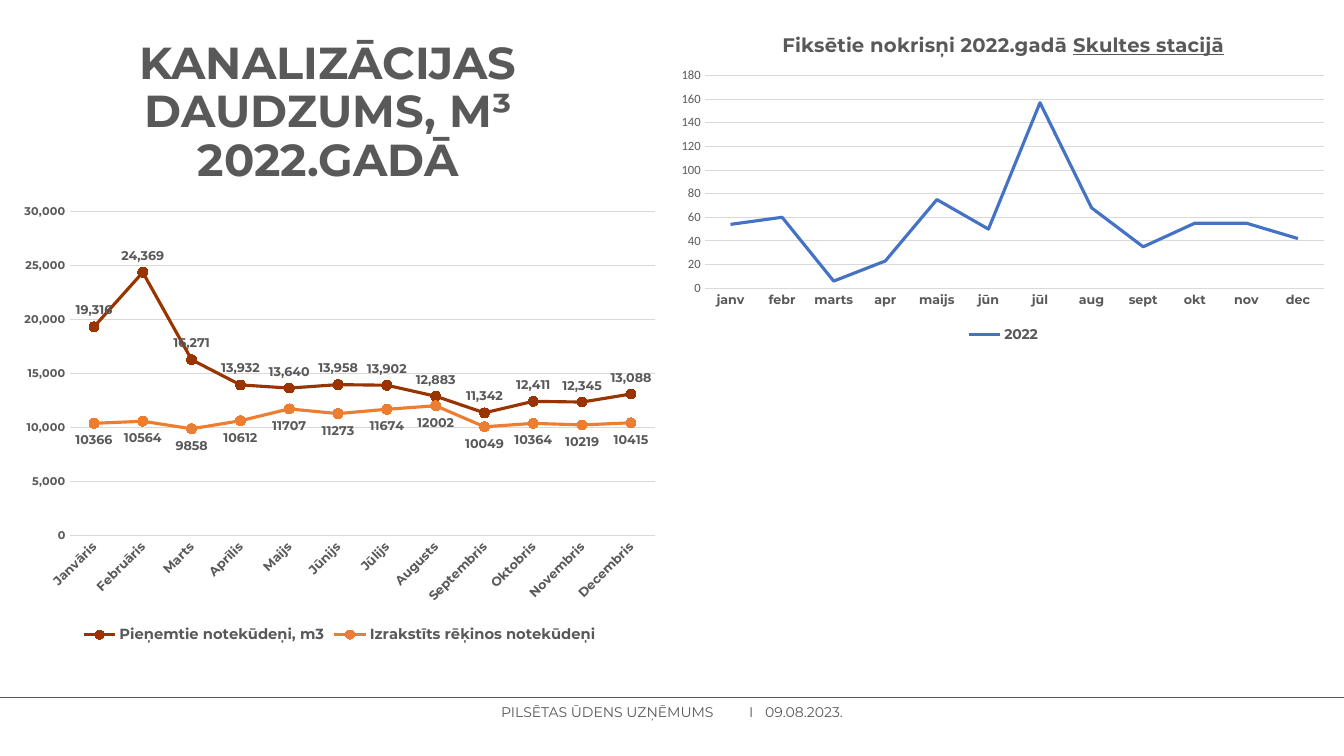
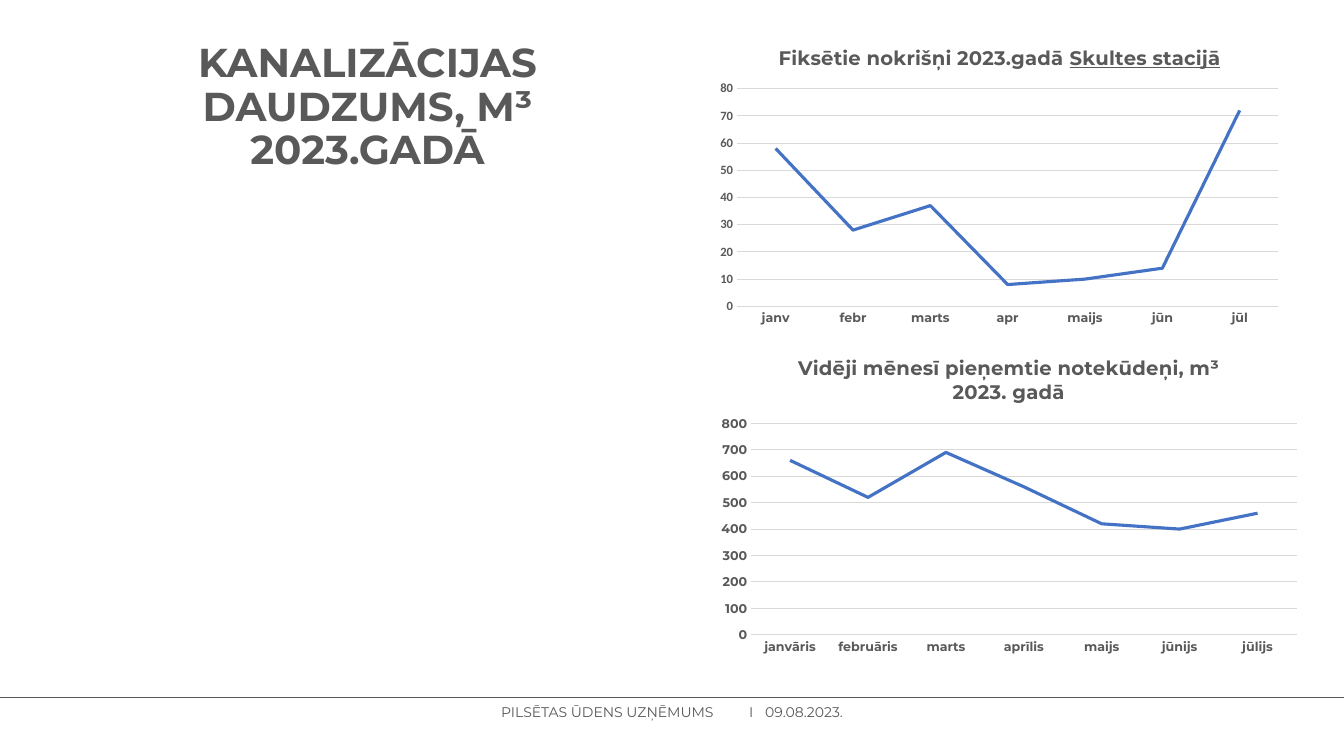
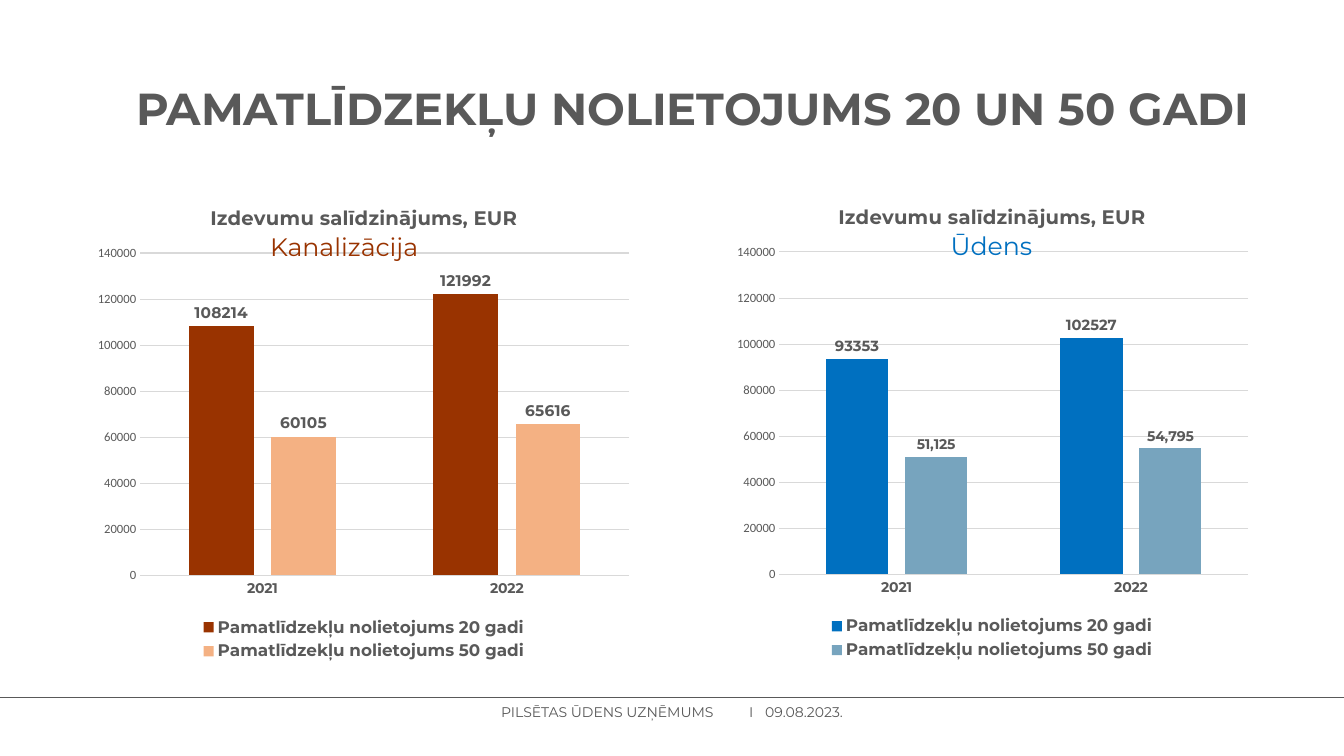
from lxml.etree import SubElement
from pptx import Presentation
from pptx.chart.data import CategoryChartData
from pptx.dml.color import RGBColor
from pptx.enum.chart import XL_CHART_TYPE, XL_LABEL_POSITION, XL_LEGEND_POSITION, XL_MARKER_STYLE, XL_TICK_MARK
from pptx.enum.shapes import MSO_CONNECTOR
from pptx.enum.text import MSO_ANCHOR, PP_ALIGN
from pptx.oxml.ns import qn
from pptx.util import Inches, Pt

GREY, GRID = "595959", "D9D9D9"
BROWN, ORANGE, PEACH = "993300", "ED7D31", "F4B183"
LINE_BLUE, BLUE, PALE_BLUE = "4472C4", "0070C0", "77A4BE"
FONT, AXIS_FONT = "Montserrat", "Calibri"
MONTHS = ["janv", "febr", "marts", "apr", "maijs", "jūn", "jūl", "aug", "sept", "okt", "nov", "dec"]
LONG_MONTHS = ["Janvāris", "Februāris", "Marts", "Aprīlis", "Maijs", "Jūnijs", "Jūlijs", "Augusts",
               "Septembris", "Oktobris", "Novembris", "Decembris"]


def rgb(value):
    """Turn a hex string into a colour."""
    return RGBColor.from_string(value)


def style(font, size, bold=True, color=GREY, name=FONT):
    """Set the look of a font."""
    font.size, font.bold, font.name = Pt(size), bold, name
    font.color.rgb = rgb(color)


def add_text(s, box, text, size, bold=False, color=GREY, align=PP_ALIGN.LEFT, spacing=0.9):
    """Add a one-paragraph text box and return its frame."""
    tf = s.shapes.add_textbox(*map(Inches, box)).text_frame
    tf.word_wrap = True
    p = tf.paragraphs[0]
    p.text, p.alignment, p.line_spacing = text, align, spacing
    style(p.font, size, bold, color)
    return tf


def add_title(s, box, text, size=32):
    """Add the slide title, centred in its box."""
    tf = add_text(s, box, text, size, True, align=PP_ALIGN.CENTER)
    tf.vertical_anchor = MSO_ANCHOR.MIDDLE


def add_footer(s, top=6.92):
    """Add the footer rule with the company name and date below it."""
    rule = s.shapes.add_connector(MSO_CONNECTOR.STRAIGHT, 0, Inches(top), Inches(13.33), Inches(top))
    rule.line.color.rgb, rule.line.width = rgb(GREY), Pt(0.75)
    SubElement(rule._element.spPr, qn("a:effectLst"))
    tf = add_text(s, (4.97, top + 0.06, 4, 0.17), "PILSĒTAS ŪDENS UZŅĒMUMS\tI\t09.08.2023.", 10,
                  spacing=Pt(12))
    tf.margin_left = tf.margin_right = tf.margin_top = tf.margin_bottom = 0
    tabs = SubElement(tf.paragraphs[0]._p.get_or_add_pPr(), qn("a:tabLst"))
    for stop in (2.46, 2.62):
        SubElement(tabs, qn("a:tab"), pos=str(Inches(stop)), algn="l")


def place_plot(chart, box, plot):
    """Fix the inner plot area, given in inches from the chart's corner."""
    area = chart._chartSpace.chart.plotArea
    for old in area.findall(qn("c:layout")):
        area.remove(old)
    layout = SubElement(area, qn("c:layout"))
    area.insert(0, layout)
    manual = SubElement(layout, qn("c:manualLayout"))
    SubElement(manual, qn("c:layoutTarget"), val="inner")
    for tag in ("xMode", "yMode"):
        SubElement(manual, qn("c:" + tag), val="edge")
    for tag, length, whole in zip("xywh", plot, box[2:] * 2):
        SubElement(manual, qn("c:" + tag), val=f"{length / whole:.4f}")


def style_axes(chart, top, step, cat_size, val_font, fmt):
    """Style both axes and the gridlines."""
    cat, val = chart.category_axis, chart.value_axis
    for axis in (cat, val):
        axis.major_tick_mark = axis.minor_tick_mark = XL_TICK_MARK.NONE
    val.minimum_scale, val.maximum_scale, val.major_unit = 0, top, step
    val.format.line.fill.background()
    for line in (cat.format.line, val.major_gridlines.format.line):
        line.color.rgb, line.width = rgb(GRID), Pt(0.75)
    style(cat.tick_labels.font, cat_size)
    size, bold, name = val_font
    style(val.tick_labels.font, size, bold, name=name)
    val.tick_labels.number_format, val.tick_labels.number_format_is_linked = fmt, False


def add_chart(s, kind, box, plot, cats, series, scale, title=(), cat_size=9,
              val_font=(9, False, AXIS_FONT), fmt="General", legend=None):
    """Add a chart; each title line is a list of (text, underlined) parts."""
    data = CategoryChartData()
    data.categories = cats
    for name, values in series:
        data.add_series(name, values)
    chart = s.shapes.add_chart(kind, *map(Inches, box), data).chart
    chart.font.size, chart.font.name = Pt(10), AXIS_FONT
    place_plot(chart, box, plot)
    style_axes(chart, *scale, cat_size, val_font, fmt)
    chart.plots[0].vary_by_categories = False
    chart.has_title = bool(title)
    for i, parts in enumerate(title):
        tf = chart.chart_title.text_frame
        p = tf.add_paragraph() if i else tf.paragraphs[0]
        style(p.font, 14)
        for text, underlined in parts:
            r = p.add_run()
            r.text = text
            style(r.font, 14)
            r.font.underline = underlined
    chart.has_legend = legend is not None
    if legend:
        chart.legend.position, chart.legend.include_in_layout = XL_LEGEND_POSITION.BOTTOM, False
        style(chart.legend.font, legend)
    return chart


def add_labels(series, position, size, fmt="General"):
    """Show the values of a series."""
    labels = series.data_labels
    labels.show_value, labels.position = True, position
    labels.number_format, labels.number_format_is_linked = fmt, False
    style(labels.font, size)


def style_line(series, color):
    """Draw a series as a straight coloured line."""
    series.smooth = False
    series.format.line.color.rgb, series.format.line.width = rgb(color), Pt(2.25)


def add_line_chart(s, box, plot, cats, name, values, scale, title, **options):
    """Add a chart with one blue line."""
    chart = add_chart(s, XL_CHART_TYPE.LINE, box, plot, cats, [(name, values)], scale, title, **options)
    style_line(chart.plots[0].series[0], LINE_BLUE)


def add_sewage_chart(s, box):
    """Add the chart of received and billed sewage."""
    received = [19316, 24369, 16271, 13932, 13640, 13958, 13902, 12883, 11342, 12411, 12345, 13088]
    billed = [10366, 10564, 9858, 10612, 11707, 11273, 11674, 12002, 10049, 10364, 10219, 10415]
    chart = add_chart(s, XL_CHART_TYPE.LINE_MARKERS, box, (0.58, 0.16, 5.81, 3.21), LONG_MONTHS,
                      [("Pieņemtie notekūdeņi, m3", received), ("Izrakstīts rēķinos notekūdeņi", billed)],
                      (30000, 5000), val_font=(8, True, FONT), fmt="#,##0", legend=10.5)
    for body in chart.category_axis._element.xpath("c:txPr/a:bodyPr"):
        body.set("rot", "-2700000")
    looks = [(BROWN, XL_LABEL_POSITION.ABOVE, "#,##0"), (ORANGE, XL_LABEL_POSITION.BELOW, "0")]
    for series, (color, position, number_format) in zip(chart.plots[0].series, looks):
        style_line(series, color)
        marker = series.marker
        marker.style, marker.size = XL_MARKER_STYLE.CIRCLE, 7
        marker.format.fill.solid()
        marker.format.fill.fore_color.rgb = marker.format.line.color.rgb = rgb(color)
        add_labels(series, position, 9, number_format)


def add_cost_panel(s, box, plot_width, values, looks, caption, caption_left):
    """Add a column chart of depreciation with its caption."""
    names = [f"Pamatlīdzekļu nolietojums {years} gadi" for years in (20, 50)]
    chart = add_chart(s, XL_CHART_TYPE.COLUMN_CLUSTERED, box, (0.53, 0.67, plot_width, 3.2),
                      ["2021", "2022"], list(zip(names, values)), (140000, 20000),
                      [[("Izdevumu salīdzinājums, EUR", False)]], cat_size=10, legend=12)
    bars = chart.plots[0]
    bars.gap_width, bars.overlap = 150, -27
    for series, (color, size, fmt) in zip(bars.series, looks):
        series.format.fill.solid()
        series.format.fill.fore_color.rgb = rgb(color)
        add_labels(series, XL_LABEL_POSITION.OUTSIDE_END, size, fmt)
    add_text(s, (box[0] + caption_left, box[1] + 0.44, 2.2, 0.53), caption, 18, color=looks[0][0])


def rain_title(text):
    """Return a rainfall title with the station underlined."""
    return [[(text + " ", False), ("Skultes stacijā", True)]]


def build_2022(s):
    """Build the slide on sewage and rainfall in 2022."""
    add_title(s, (0.32, 0.4, 5.87, 1.45), "KANALIZĀCIJAS DAUDZUMS, M³ 2022.GADĀ")
    add_sewage_chart(s, (0.11, 1.94, 6.52, 4.49))
    add_line_chart(s, (6.63, 0.16, 6.64, 3.28), (0.36, 0.59, 6.14, 2.11), MONTHS, "2022",
                   [54, 60, 6, 23, 75, 50, 157, 68, 35, 55, 55, 42], (180, 20),
                   rain_title("Fiksētie nokrisņi 2022.gadā"), legend=10)


def build_2023(s):
    """Build the slide on sewage and rainfall in 2023."""
    add_title(s, (0.73, 0.35, 5.83, 1.45), "KANALIZĀCIJAS DAUDZUMS, M³ 2023.GADĀ", 28.8)
    add_line_chart(s, (7.04, 3.37, 5.93, 3.2), (0.41, 0.83, 5.41, 2.1),
                   [month.lower() for month in LONG_MONTHS[:7]], "Notekūdeņi",
                   [660, 520, 690, 560, 420, 400, 460], (800, 100),
                   [[("Vidēji mēnesī pieņemtie notekūdeņi, m³", False)], [("2023. gadā", False)]],
                   val_font=(9, True, FONT))
    add_line_chart(s, (7.03, 0.3, 5.77, 3), (0.28, 0.58, 5.37, 2.16), MONTHS[:7], "Nokrišņi",
                   [58, 28, 37, 8, 10, 14, 72], (80, 10), rain_title("Fiksētie nokrišņi 2023.gadā"),
                   val_font=(9, True, AXIS_FONT))


def build_depreciation(s):
    """Build the slide comparing depreciation over 20 and 50 years."""
    add_title(s, (1.14, 0.38, 11.47, 1.45), "PAMATLĪDZEKĻU NOLIETOJUMS 20 UN 50 GADI")
    add_cost_panel(s, (0.86, 1.84, 5.5, 4.76), 4.85, [(108214, 121992), (60105, 65616)],
                   [(BROWN, 11, "General"), (PEACH, 11, "General")], "Kanalizācija", 1.72)
    add_cost_panel(s, (7.2, 1.83, 5.28, 4.76), 4.65, [(93353, 102527), (51125, 54795)],
                   [(BLUE, 10.5, "General"), (PALE_BLUE, 10, "#,##0")], "Ūdens", 2.13)


def main():
    """Build and save the presentation."""
    prs = Presentation()
    prs.slide_width, prs.slide_height = Inches(13.33), Inches(7.5)
    for build in (build_2022, build_2023, build_depreciation):
        s = prs.slides.add_slide(prs.slide_layouts[6])
        build(s)
        add_footer(s)
    prs.save("out.pptx")


if __name__ == "__main__":
    main()
